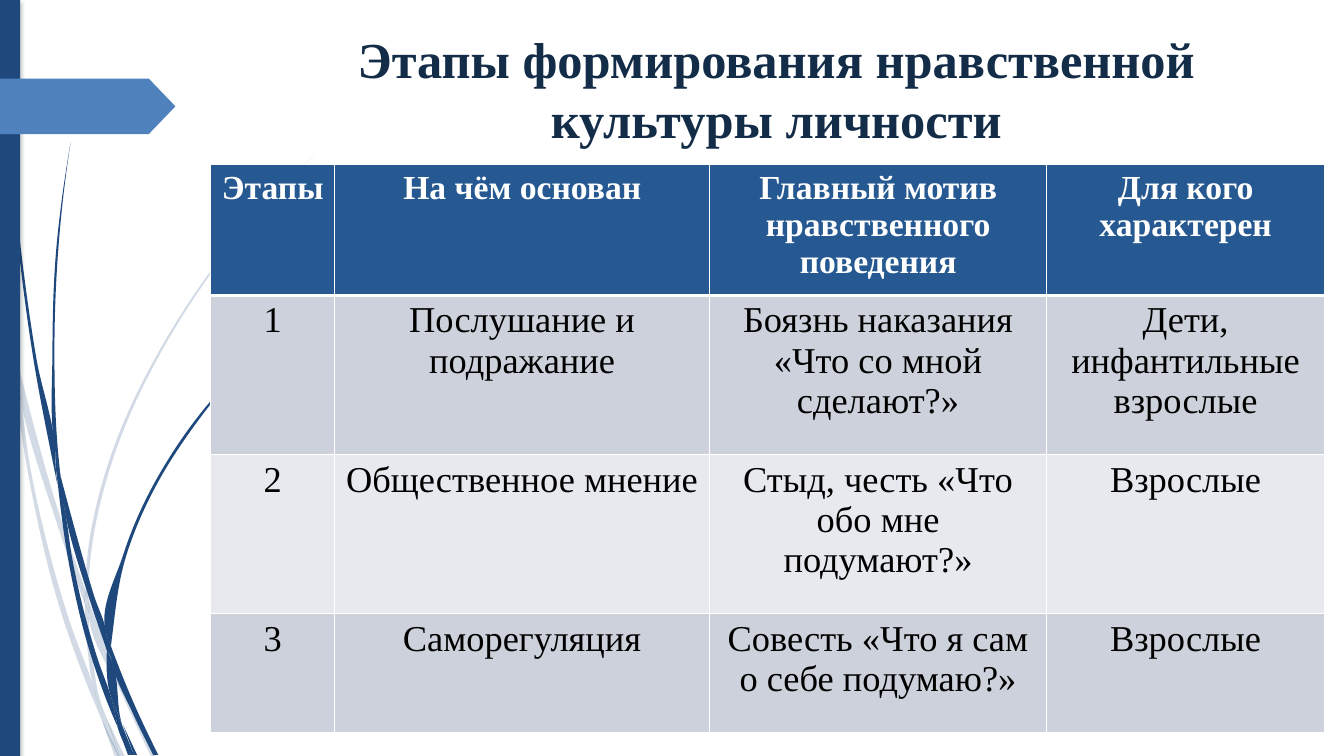
from dataclasses import dataclass
from typing import NamedTuple

from lxml.etree import SubElement
from pptx import Presentation
from pptx.dml.color import RGBColor
from pptx.enum.shapes import MSO_SHAPE
from pptx.enum.text import MSO_ANCHOR, PP_ALIGN
from pptx.oxml.ns import qn
from pptx.util import Emu, Inches, Pt

COLUMNS, ROWS = 1333, 750
CELL = Inches(0.01)


@dataclass(frozen=True)
class Theme:
    """Colours, font and type sizes of the slide."""
    navy: str = "1F497D"
    blue: str = "4F81BD"
    title: str = "132C48"
    header: str = "265991"
    bands: tuple = ("CCD1DB", "E7E9EE")
    white: str = "FFFFFF"
    black: str = "000000"
    font: str = "Times New Roman"
    title_size: int = 36
    header_size: int = 24
    body_size: int = 26
    thin_line: float = 0.96
    thick_line: float = 3


class Box(NamedTuple):
    """A region in grid columns and rows."""
    left: float
    top: float
    width: float
    height: float

    def emu(self):
        """Return the region in slide units."""
        return [Emu(round(length * CELL)) for length in self]


THEME = Theme()
PAGE = Box(0, 0, COLUMNS, ROWS)
TITLE = "Этапы формирования нравственной культуры личности"
STAGES = [
    ("Этапы", "На чём основан", "Главный мотив нравственного поведения", "Для кого характерен"),
    ("1", "Послушание и подражание", "Боязнь наказания «Что со мной сделают?»",
     "Дети, инфантильные взрослые"),
    ("2", "Общественное мнение", "Стыд, честь «Что обо мне подумают?»", "Взрослые"),
    ("3", "Саморегуляция", "Совесть «Что я сам о себе подумаю?»", "Взрослые"),
]
STAGE_COLUMNS = (123, 372, 334, 276)
STAGE_ROWS = (113, 158, 158, 118)

PALE_STRANDS = [
    ([(0, 299), (10, 344), (11, 350)], [(0, 282), (8, 322), (11, 350)]),
    ([(14, 345), (17, 376), (57, 521), (84, 599)], [(14, 345), (62, 520), (85, 586)]),
    ([(88, 596), (88, 610), (123, 693), (150, 751)], [(88, 596), (92, 607), (127, 691), (155, 751)]),
    ([(105, 711), (119, 751)], [(105, 711), (124, 751)]),
    ([(11, 350), (28, 470), (65, 621), (92, 693), (101, 714)],
     [(11, 350), (17, 376), (31, 469), (70, 619), (93, 683), (99, 707), (101, 714)]),
    ([(84, 599), (87, 646), (93, 683), (96, 692), (105, 711)],
     [(84, 599), (88, 608), (88, 610), (91, 646), (103, 706), (105, 711)]),
    ([(312, 153), (268, 197), (228, 244), (158, 348), (107, 461), (85, 583), (85, 586), (88, 596)],
     [(312, 153), (290, 175), (268, 198), (229, 245), (160, 349), (110, 462), (88, 583), (88, 596)]),
    ([(101, 714), (114, 751)], [(101, 714), (119, 751)]),
    ([(85, 586), (84, 599), (88, 608), (88, 610)], [(85, 586), (88, 596), (88, 610)]),
    ([(93, 683), (99, 707), (101, 714), (118, 751)], [(93, 683), (96, 692), (105, 711), (119, 751)]),
]
DARK_STRANDS = [
    ([(3, 0), (4, 48), (7, 110), (17, 233), (33, 355), (56, 476), (57, 481)],
     [(4, 0), (5, 48), (8, 109), (19, 232), (36, 355), (55, 453), (55, 457), (57, 481)]),
    ([(60, 472), (64, 505), (88, 592), (106, 645)], [(60, 472), (93, 590), (106, 631), (106, 645)]),
    ([(110, 641), (111, 656), (132, 708), (152, 749)], [(110, 641), (113, 649), (136, 705), (157, 749)]),
    ([(57, 477), (68, 557), (93, 659), (111, 708), (117, 722)],
     [(57, 477), (64, 505), (72, 556), (98, 657), (110, 691), (116, 717), (117, 722)]),
    ([(70, 141), (62, 193), (56, 245), (52, 349), (55, 449), (60, 472)],
     [(70, 141), (63, 193), (58, 245), (54, 349), (58, 453), (60, 472)]),
    ([(122, 719), (133, 749)], [(122, 719), (136, 749)]),
    ([(55, 449), (55, 453), (57, 477), (64, 505)], [(55, 449), (60, 472), (64, 505)]),
    ([(260, 344), (231, 373), (203, 405), (156, 474), (122, 551), (106, 631), (110, 641)],
     [(261, 344), (245, 359), (231, 374), (205, 406), (158, 476), (125, 552), (111, 633), (110, 641)]),
    ([(117, 722), (127, 749)], [(117, 722), (130, 749)]),
    ([(106, 645), (110, 691), (116, 706), (121, 719)],
     [(106, 645), (109, 651), (111, 656), (120, 715), (121, 719)]),
    ([(106, 631), (106, 645), (109, 650), (111, 656)], [(106, 631), (110, 641), (111, 656)]),
    ([(110, 691), (116, 717), (117, 722), (130, 749)], [(110, 691), (116, 706), (121, 719), (133, 749)]),
]


def paint(shape, color, alpha=100):
    """Give a shape a plain fill without line or shadow."""
    shape.shadow.inherit = False
    shape.line.fill.background()
    shape.fill.solid()
    shape.fill.fore_color.rgb = RGBColor.from_string(color)
    if alpha < 100:
        tint = shape.fill._xPr.find(qn("a:solidFill"))[0]
        SubElement(tint, qn("a:alpha"), val=str(alpha * 1000))


def write(text_frame, text, size, color, bold):
    """Set one centred paragraph in the slide's font."""
    text_frame.text = text
    paragraph = text_frame.paragraphs[0]
    paragraph.alignment = PP_ALIGN.CENTER
    font = paragraph.runs[0].font
    font.name, font.size, font.bold = THEME.font, Pt(size), bold
    font.color.rgb = RGBColor.from_string(color)
    SubElement(paragraph._p, qn("a:endParaRPr"), sz=str(size * 100))


def bezier(anchors):
    """Return anchors and handles of a smooth curve that runs down through the anchors."""
    chords = [(x2 - x1) / (y2 - y1) for (x1, y1), (x2, y2) in zip(anchors, anchors[1:])]
    drops = [y2 - y1 for (_, y1), (_, y2) in zip(anchors, anchors[1:])]
    inner = [(chords[i] * drops[i + 1] + chords[i + 1] * drops[i]) / (drops[i] + drops[i + 1])
             for i in range(len(chords) - 1)]
    slopes = [chords[0], *inner, chords[-1]]
    if inner:
        slopes[0] = (3 * chords[0] - inner[0]) / 2
        slopes[-1] = (3 * chords[-1] - inner[-1]) / 2
    curve = [anchors[0]]
    for index, ((x1, y1), (x2, y2)) in enumerate(zip(anchors, anchors[1:])):
        third = drops[index] / 3
        curve += [(x1 + slopes[index] * third, y1 + third),
                  (x2 - slopes[index + 1] * third, y2 - third), (x2, y2)]
    return curve


def add_strand(slide, box, left_edge, right_edge, alpha):
    """Draw one tapered strand between a left and a right edge."""
    left, right = bezier(left_edge), bezier(right_edge)[::-1]
    foot = [left[-1], right[0], right[0]]
    outline = left + foot + right[1:]
    points = [((box.left + x) * CELL, (box.top + y) * CELL) for x, y in outline]
    builder = slide.shapes.build_freeform(*points[0])
    builder.add_line_segments(points[1:], close=True)
    shape = builder.convert_to_shape()
    lines = list(shape._element.iter(qn("a:lnTo")))
    for first in range(0, len(lines), 3):
        start, *others = lines[first:first + 3]
        start.tag = qn("a:cubicBezTo")
        for line in others:
            start.append(line[0])
            line.getparent().remove(line)
    paint(shape, THEME.navy, alpha)


def add_side_decoration(slide, box):
    """Draw the strands, the side bar and the arrow tab at the left."""
    for strands, alpha in ((PALE_STRANDS, 20), (DARK_STRANDS, 100)):
        for left_edge, right_edge in strands:
            add_strand(slide, box, left_edge, right_edge, alpha)
    bar_box = Box(box.left, box.top, 20, box.height)
    bar = slide.shapes.add_shape(MSO_SHAPE.RECTANGLE, *bar_box.emu())
    paint(bar, THEME.navy)
    effects = bar._element.spPr.find(qn("a:effectLst"))
    shadow = SubElement(effects, qn("a:outerShdw"), blurRad=str(Pt(3)), dist=str(Pt(2)), dir="5400000")
    shade = SubElement(shadow, qn("a:srgbClr"), val=THEME.black)
    SubElement(shade, qn("a:alpha"), val="25000")
    tab_box = Box(box.left, box.top + 78, 174, 55)
    tab = slide.shapes.add_shape(MSO_SHAPE.PENTAGON, *tab_box.emu())
    tab.adjustments[0] = 0.48
    paint(tab, THEME.blue)


def add_title(slide, box):
    """Write the slide title at the top of its box."""
    text_frame = slide.shapes.add_textbox(*box.emu()).text_frame
    text_frame.word_wrap = True
    text_frame.vertical_anchor = MSO_ANCHOR.TOP
    write(text_frame, TITLE, THEME.title_size, THEME.title, True)


def add_borders(cell, row):
    """Draw white cell borders, thick between header and body."""
    widths = {"L": THEME.thin_line, "R": THEME.thin_line,
              "T": THEME.thick_line if row == 1 else THEME.thin_line,
              "B": THEME.thick_line if row == 0 else THEME.thin_line}
    properties = cell._tc.get_or_add_tcPr()
    for side, width in widths.items():
        line = SubElement(properties, qn(f"a:ln{side}"), w=str(Pt(width)))
        SubElement(SubElement(line, qn("a:solidFill")), qn("a:srgbClr"), val=THEME.white)


def add_stage_table(slide, box):
    """Build the table of stages with a header and banded rows."""
    table = slide.shapes.add_table(len(STAGES), len(STAGE_COLUMNS), *box.emu()).table
    for column, width in zip(table.columns, STAGE_COLUMNS):
        column.width = Emu(width * CELL)
    for row, height in zip(table.rows, STAGE_ROWS):
        row.height = Emu(height * CELL)
    for row, texts in enumerate(STAGES):
        header = row == 0
        size, color = (THEME.header_size, THEME.white) if header else (THEME.body_size, THEME.black)
        fill = THEME.header if header else THEME.bands[(row - 1) % 2]
        for column, text in enumerate(texts):
            cell = table.cell(row, column)
            add_borders(cell, row)
            cell.fill.solid()
            cell.fill.fore_color.rgb = RGBColor.from_string(fill)
            write(cell.text_frame, text, size, color, header)


def main():
    """Build and save the presentation."""
    presentation = Presentation()
    _, _, presentation.slide_width, presentation.slide_height = PAGE.emu()
    slide = presentation.slides.add_slide(presentation.slide_layouts[6])
    add_side_decoration(slide, PAGE)
    add_title(slide, Box(283, 23, 974, 140))
    add_stage_table(slide, Box(209, 163, sum(STAGE_COLUMNS), sum(STAGE_ROWS)))
    presentation.save("out.pptx")


if __name__ == "__main__":
    main()
